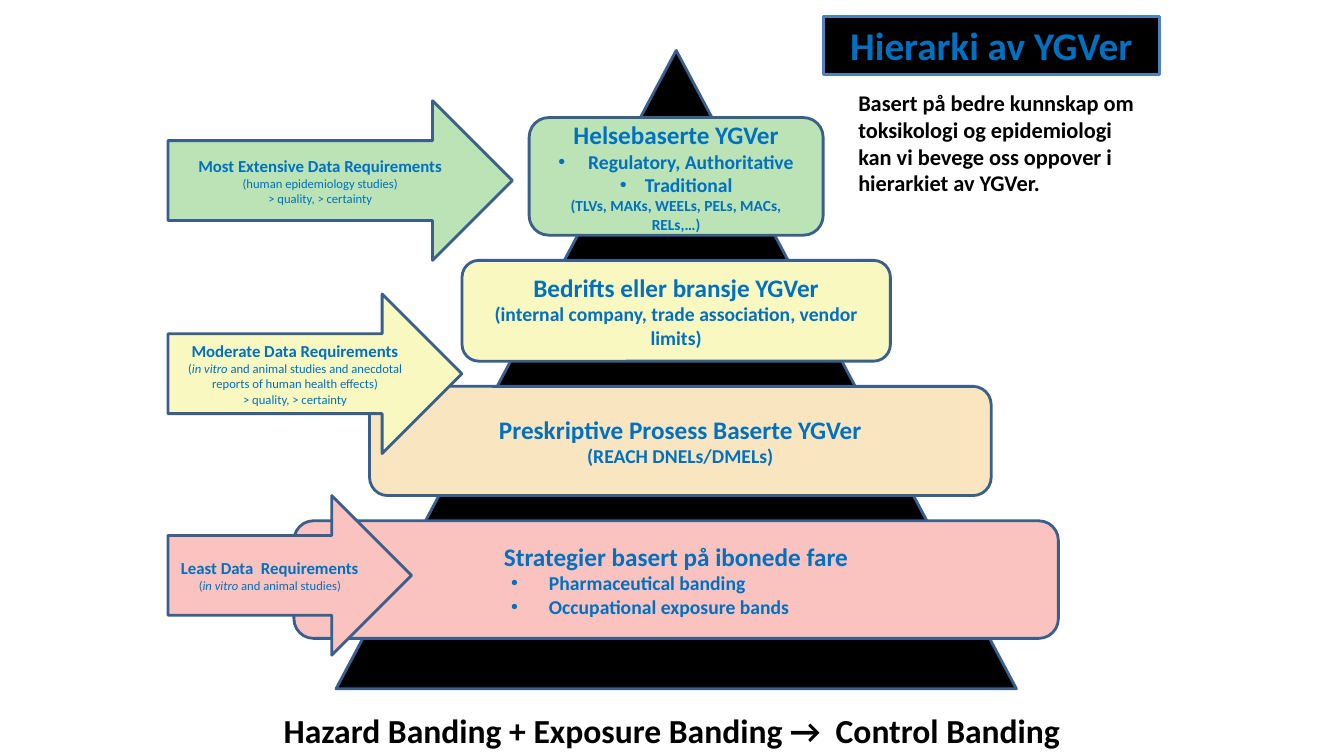
from dataclasses import dataclass
from typing import Optional

from lxml.etree import SubElement
from pptx import Presentation
from pptx.dml.color import RGBColor
from pptx.enum.shapes import MSO_SHAPE
from pptx.enum.text import MSO_ANCHOR, PP_ALIGN
from pptx.oxml.ns import qn
from pptx.util import Emu, Pt

PX = 9525  # EMU in one px, 96 px to the inch
COLORS = {
    "black": "000000", "blue": "0070C0", "edge": "3A5F8C", "frame": "4F81BD",
    "green": "BBE3B6", "yellow": "F9F8C0", "sand": "F9E6C1", "pink": "FBC3BF",
}


@dataclass
class Line:
    text: str  # every second part between bars is italic
    size: float
    bold: bool = True
    bullet: bool = False
    left: int = 0
    hang: int = 0
    level: int = 0
    align: PP_ALIGN = PP_ALIGN.CENTER


@dataclass
class Block:
    kind: MSO_SHAPE
    box: tuple[int, int, int, int]
    fill: str
    lines: tuple[Line, ...] = ()
    edge: str = "edge"
    width: float = 2
    color: str = "blue"
    anchor: MSO_ANCHOR = MSO_ANCHOR.MIDDLE


def px(num: int) -> Emu:
    return Emu(num * PX)


def rgb(name: str) -> RGBColor:
    return RGBColor.from_string(COLORS[name])


def write(para, text: str, *, size: float, bold: bool, color: str) -> None:
    for num, part in enumerate(text.split("|")):
        run = para.add_run()
        run.text = part
        font = run.font
        font.name, font.size, font.bold = "Calibri", Pt(size), bold
        font.italic = num % 2 == 1
        font.color.rgb = rgb(color)


def fill_text(frame, lines: tuple[Line, ...], color: str, anchor: MSO_ANCHOR) -> None:
    frame.word_wrap = True
    frame.vertical_anchor = anchor
    for num, line in enumerate(lines):
        para = frame.add_paragraph() if num else frame.paragraphs[0]
        para.alignment, para.level = line.align, line.level
        props = para._p.get_or_add_pPr()
        if line.hang:
            props.set("marL", str(px(line.left)))
            props.set("indent", str(px(-line.hang)))
        if line.bullet:
            SubElement(props, qn("a:buFont")).set("typeface", "Arial")
            SubElement(props, qn("a:buChar")).set("char", "•")
        write(para, line.text, size=line.size, bold=line.bold, color=color)


def draw(slide, block: Block) -> None:
    shape = slide.shapes.add_shape(block.kind, *map(px, block.box))
    shape.shadow.inherit = False
    shape.fill.solid()
    shape.fill.fore_color.rgb = rgb(block.fill)
    shape.line.color.rgb = rgb(block.edge)
    shape.line.width = Pt(block.width)
    if block.lines:
        fill_text(shape.text_frame, block.lines, block.color, block.anchor)


def label(slide, box: tuple[int, int, int, int], line: Line) -> None:
    shape = slide.shapes.add_textbox(*map(px, box))
    fill_text(shape.text_frame, (line,), "black", MSO_ANCHOR.TOP)


def tier(box: tuple[int, int, int, int], fill: str, *lines: Line) -> Block:
    return Block(MSO_SHAPE.ROUNDED_RECTANGLE, box, fill, lines)


def arrow(top: int, width: int, fill: str, head: str, *notes: str) -> Block:
    lines = (Line(head, 12), *(Line(note, 9, bold=False) for note in notes))
    return Block(MSO_SHAPE.RIGHT_ARROW, (160, top, width, 152), fill, lines)


def point(text: str, left: int = 24, hang: int = 24, level: int = 0,
          align: Optional[PP_ALIGN] = PP_ALIGN.CENTER) -> Line:
    return Line(text, 14, bullet=True, left=left, hang=hang, level=level, align=align)


def band(text: str) -> Line:
    return point(text, 228, 36, 4, PP_ALIGN.LEFT)


QUALITY = "> quality, > certainty"

BLOCKS = (
    # Pyramid
    Block(MSO_SHAPE.ISOSCELES_TRIANGLE, (320, 48, 648, 608), "black"),
    # Tiers
    tier((504, 112, 280, 112), "green",
         Line("Helsebaserte YGVer", 18),
         point(" Regulatory, Authoritative"),
         point("Traditional"),
         Line("(TLVs, MAKs, WEELs, PELs, MACs, RELs,…)", 11)),
    tier((440, 248, 408, 96), "yellow",
         Line("Bedrifts eller bransje YGVer", 18),
         Line("(internal company, trade association, vendor limits)", 14)),
    tier((280, 496, 728, 112), "pink",
         Line("Strategier basert på ibonede fare", 18, left=36, hang=36),
         band("Pharmaceutical banding"),
         band("Occupational exposure bands")),
    tier((352, 368, 592, 104), "sand",
         Line("Preskriptive Prosess Baserte YGVer", 18),
         Line("(REACH DNELs/DMELs)", 14)),
    # Data arrows
    arrow(96, 328, "green", "Most Extensive Data Requirements",
          "(human epidemiology studies)", QUALITY),
    arrow(280, 280, "yellow", "Moderate Data Requirements",
          "(|in vitro |and animal studies and anecdotal reports of human health effects)",
          QUALITY),
    arrow(472, 232, "pink", "Least Data  Requirements",
          "(|in vitro |and animal studies)"),
    # Title
    Block(MSO_SHAPE.RECTANGLE, (784, 16, 320, 55), "black",
          (Line("Hierarki av YGVer", 28),), "frame", 2.25, anchor=MSO_ANCHOR.TOP),
)


def main() -> None:
    deck = Presentation()
    deck.slide_width, deck.slide_height = px(1280), px(720)
    slide = deck.slides.add_slide(deck.slide_layouts[6])
    for block in BLOCKS:
        draw(slide, block)
    # Side note and footer
    label(slide, (808, 80, 296, 113),
          Line("Basert på bedre kunnskap om toksikologi og epidemiologi kan vi "
               "bevege oss oppover i hierarkiet av YGVer.", 16, align=PP_ALIGN.LEFT))
    label(slide, (232, 671, 816, 49),
          Line("Hazard Banding + Exposure Banding →  Control Banding", 24))
    deck.save("out.pptx")


if __name__ == "__main__":
    main()
